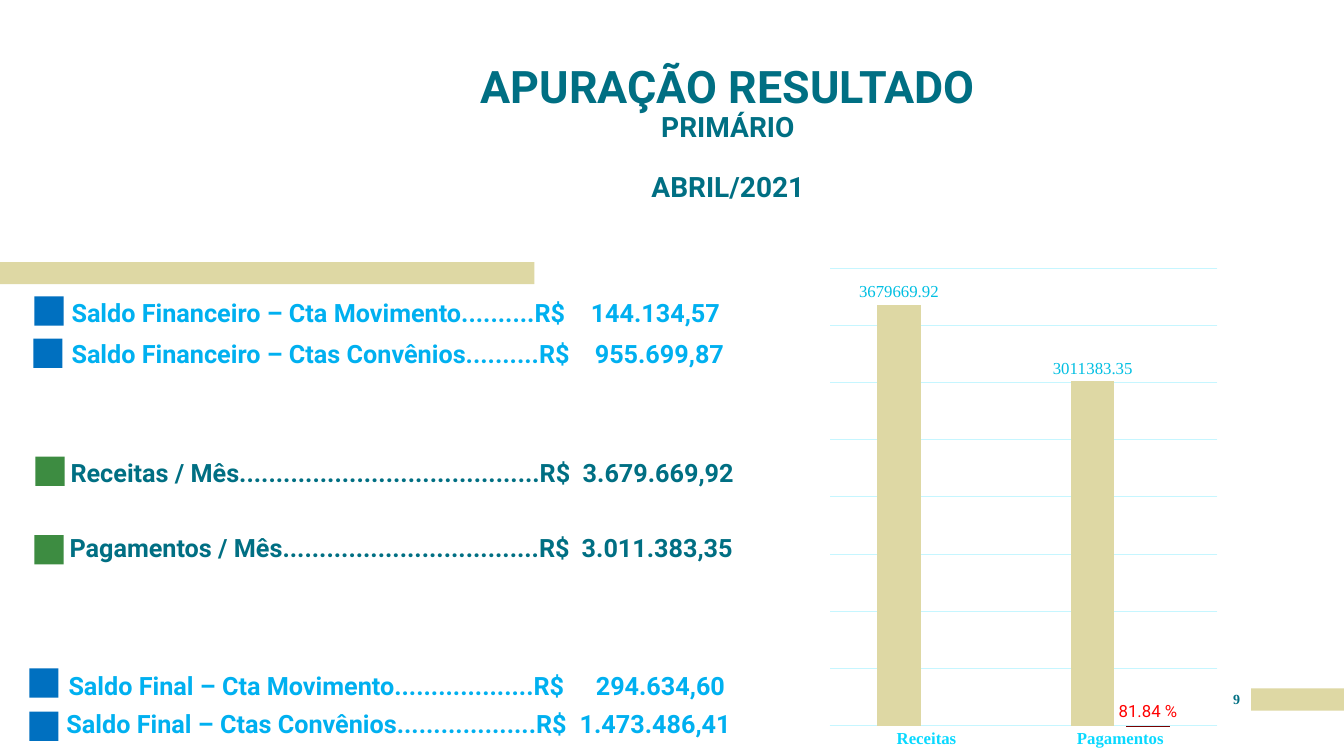
from lxml import etree
from pptx import Presentation
from pptx import util as u
from pptx.chart.data import CategoryChartData
from pptx.dml.color import RGBColor
from pptx.enum import chart as ch, shapes, text
from pptx.oxml.ns import qn

TEAL, SKY, BLUE, GREEN, SAND, ICE = "006F83", "00B0F0", "0070C0", "3D8C41", "DED8A4", "C6F6FF"


def paint(target, color, **formats):
    """Colour a font, fill or line, and set its other format values."""
    if hasattr(target, "solid"):
        target.solid()
        target.fore_color.rgb = RGBColor.from_string(color)
    else:
        target.color.rgb = RGBColor.from_string(color)
    for name, value in formats.items():
        setattr(target, name, value)


def add_text(left, top, width, height, anchor):
    """Add an empty text box without margins and return its text frame."""
    box = slide.shapes.add_textbox(*map(u.Inches, (left, top, width, height)))
    formats = dict(margin_left=0, margin_right=0, margin_top=0, margin_bottom=0,
                   word_wrap=True, vertical_anchor=anchor)
    for name, value in formats.items():
        setattr(box.text_frame, name, value)
    return box.text_frame


presentation = Presentation()
presentation.slide_width, presentation.slide_height = u.Inches(13.33), u.Inches(7.5)
slide = presentation.slides.add_slide(presentation.slide_layouts[6])

# Sand bars and square markers
MARKER = 0.29
rectangles = [
    (12.41, 6.83, 0.92, 0.22, SAND),
    (0, 2.6, 5.3, 0.22, SAND),
    (0.34, 2.94, MARKER, MARKER, BLUE),
    (0.33, 3.36, MARKER, MARKER, BLUE),
    (0.35, 4.53, MARKER, MARKER, GREEN),
    (0.34, 5.31, MARKER, MARKER, GREEN),
    (0.29, 6.63, MARKER, MARKER, BLUE),
    (0.29, 7.06, MARKER, MARKER, BLUE),
]
for *place, color in rectangles:
    shape = slide.shapes.add_shape(shapes.MSO_SHAPE.RECTANGLE, *map(u.Inches, place))
    shape.shadow.inherit = False
    shape.line.fill.background()
    paint(shape.fill, color)

# Title
frame = add_text(4.05, 0.11, 6.34, 1.91, text.MSO_ANCHOR.BOTTOM)
title_lines = [("APURAÇÃO RESULTADO", 32, 0), ("PRIMÁRIO", 20, 0), ("ABRIL/2021", 20, 21.5)]
for index, (line, size, space) in enumerate(title_lines):
    paragraph = frame.add_paragraph() if index else frame.paragraphs[0]
    paragraph.alignment = text.PP_ALIGN.CENTER
    paragraph.line_spacing = 0.9
    paragraph.space_before = u.Pt(space)
    run = paragraph.add_run()
    run.text = line
    paint(run.font, TEAL, name="Roboto", size=u.Pt(size), bold=True)

# Balance lines: a tab stop places each amount
balances = [
    (0.71, 2.87, 0.38, "Saldo Financeiro – Cta Movimento..........R$", 5.86, "144.134,57", SKY),
    (0.71, 3.28, 0.38, "Saldo Financeiro – Ctas Convênios..........R$", 5.9, "955.699,87", SKY),
    (0.7, 4.46, 0.38, "Receitas / Mês.........................................R$", 5.78, "3.679.669,92", TEAL),
    (0.69, 5.2, 0.38, "Pagamentos / Mês...................................R$", 5.77, "3.011.383,35", TEAL),
    (0.68, 6.5, 0.45, "Saldo Final – Cta Movimento...................R$", 5.91, "294.634,60", SKY),
    (0.66, 6.95, 0.38, "Saldo Final – Ctas Convênios...................R$", 5.75, "1.473.486,41", SKY),
]
for left, top, height, label, amount_left, amount, color in balances:
    paragraph = add_text(left, top, 7.5, height, text.MSO_ANCHOR.BOTTOM).paragraphs[0]
    paragraph.line_spacing = 0.9
    paragraph.space_before = u.Pt(6)
    tabs = etree.SubElement(paragraph._p.get_or_add_pPr(), qn("a:tabLst"))
    etree.SubElement(tabs, qn("a:tab"), pos=str(u.Inches(amount_left - left)), algn="l")
    run = paragraph.add_run()
    run.text = f"{label}\t{amount}"
    paint(run.font, color, name="Roboto", size=u.Pt(18), bold=True)

# Column chart
data = CategoryChartData()
data.categories = ["Receitas", "Pagamentos"]
data.add_series("Series 1", [3679669.92, 3011383.35])
data.add_series("Series 2", [None, 81.84])
chart = slide.shapes.add_chart(ch.XL_CHART_TYPE.COLUMN_CLUSTERED,
                               *map(u.Inches, (7.44, 2.51, 4.93, 4.99)), data).chart
chart.has_legend = chart.has_title = False
paint(chart.font, TEAL, name="Times New Roman", size=u.Pt(10))
plot = chart.plots[0]
for name, value in dict(gap_width=219, overlap=-27, vary_by_categories=False).items():
    setattr(plot, name, value)

# Axes
category_axis, value_axis = chart.category_axis, chart.value_axis
category_axis.major_tick_mark = ch.XL_TICK_MARK.NONE
paint(category_axis.tick_labels.font, "09D9FF", name="Times New Roman", size=u.Pt(12), bold=True)
value_formats = dict(visible=False, minimum_scale=0, maximum_scale=4000000,
                     major_unit=500000, has_major_gridlines=True)
for name, value in value_formats.items():
    setattr(value_axis, name, value)
for line in (category_axis.format.line, value_axis.major_gridlines.format.line):
    paint(line, ICE, width=u.Pt(0.75))

# Series and value labels
series_formats = [(SAND, "00BFE2", "Times New Roman", "General"),
                  ("790000", "FF0000", "Roboto", "0.00")]
for series, (color, label_color, font, number_format) in zip(plot.series, series_formats):
    paint(series.format.fill, color)
    labels = series.data_labels
    label_formats = dict(show_value=True, number_format=number_format, number_format_is_linked=False,
                         position=ch.XL_LABEL_POSITION.OUTSIDE_END)
    for name, value in label_formats.items():
        setattr(labels, name, value)
    paint(labels.font, label_color, name=font, size=u.Pt(12))
percent_label = plot.series[1].points[1].data_label
run = percent_label.text_frame.paragraphs[0].add_run()
run.text = "81.84 %"
paint(run.font, "FF0000", name="Roboto", size=u.Pt(12), bold=False)
percent_label.position = ch.XL_LABEL_POSITION.OUTSIDE_END

# Inner plot area as fractions of the chart
plot_area = chart._chartSpace.chart.plotArea
for old in plot_area.findall(qn("c:layout")):
    plot_area.remove(old)
layout = etree.Element(qn("c:layout"))
plot_area.insert(0, layout)
manual = etree.SubElement(layout, qn("c:manualLayout"))
layout_values = dict(layoutTarget="inner", xMode="edge", yMode="edge", x=0.16, y=0.03, w=0.78, h=0.91)
for name, value in layout_values.items():
    etree.SubElement(manual, qn(f"c:{name}"), val=str(value))

# Page number
paragraph = add_text(12.12, 6.85, 0.29, 0.25, text.MSO_ANCHOR.TOP).paragraphs[0]
paragraph.alignment = text.PP_ALIGN.CENTER
run = paragraph.add_run()
run.text = "9"
paint(run.font, TEAL, name="Times New Roman", size=u.Pt(10), bold=True)

presentation.save("out.pptx")
